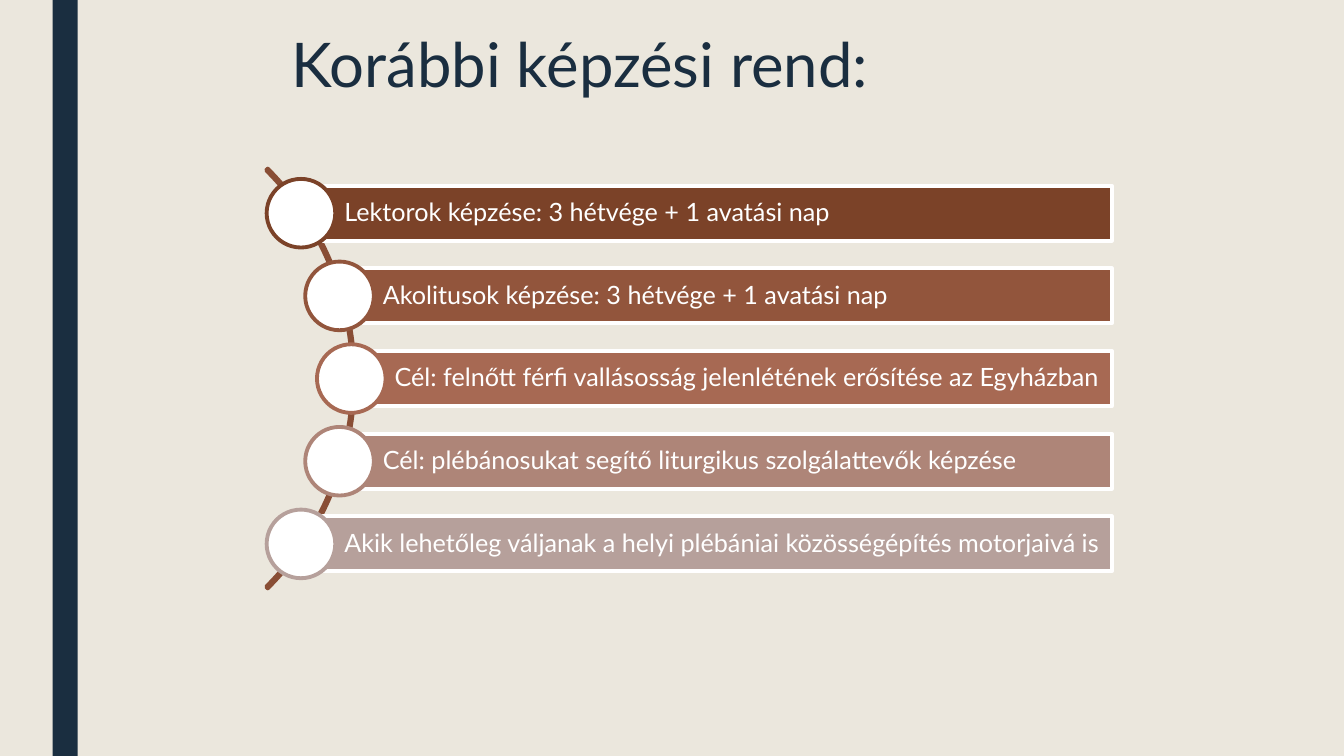
from dataclasses import dataclass
from math import sqrt

from pptx import Presentation
from pptx.dml.color import RGBColor as RGB
from pptx.enum.shapes import MSO_SHAPE as SHAPE
from pptx.enum.text import MSO_ANCHOR as ANCHOR, MSO_AUTO_SIZE as AUTOSIZE, PP_ALIGN as ALIGN
from pptx.util import Pt


@dataclass(frozen=True)
class Theme:
    font: str = "Lato"
    background: str = "EBE7DD"
    navy: str = "1A2E40"
    white: str = "FFFFFF"
    arc: str = "894E35"
    steps: tuple = ("7B4228", "92553C", "A76953", "AE8578", "B6A09B")
    title_size: float = 44
    step_size: float = 18
    line_width: float = 2.75


def write(tf, text, *, font, size, color, anchor=ANCHOR.MIDDLE, spacing=0.9,
          insets=(7.2, 3.6, 7.2, 3.6)):
    tf.word_wrap = True
    tf.auto_size = AUTOSIZE.NONE
    tf.vertical_anchor = anchor
    tf.margin_left, tf.margin_top, tf.margin_right, tf.margin_bottom = map(Pt, insets)
    p = tf.paragraphs[0]
    p.alignment = ALIGN.LEFT
    p.line_spacing = spacing
    r = p.add_run()
    r.text = text
    r.font.name = font
    r.font.size = Pt(size)
    r.font.color.rgb = RGB.from_string(color)


class Deck:
    def __init__(self, theme, width, height):
        self.theme = theme
        self.prs = Presentation()
        self.prs.slide_width, self.prs.slide_height = Pt(width), Pt(height)
        self.s = None

    def add_slide(self):
        self.s = self.prs.slides.add_slide(self.prs.slide_layouts[5])
        fill = self.s.background.fill
        fill.solid()
        fill.fore_color.rgb = RGB.from_string(self.theme.background)

    def title(self, text, x, y, w, h):
        sp = self.s.shapes.title
        sp.left, sp.top, sp.width, sp.height = map(Pt, (x, y, w, h))
        write(sp.text_frame, text, font=self.theme.font, size=self.theme.title_size,
              color=self.theme.navy, anchor=ANCHOR.TOP, spacing=0.89)

    def shape(self, kind, x, y, w, h, fill=None, line=None):
        sp = self.s.shapes.add_shape(kind, *map(Pt, (x, y, w, h)))
        sp.shadow.inherit = False
        if fill:
            sp.fill.solid()
            sp.fill.fore_color.rgb = RGB.from_string(fill)
        else:
            sp.fill.background()
        if line:
            sp.line.color.rgb = RGB.from_string(line)
            sp.line.width = Pt(self.theme.line_width)
        else:
            sp.line.fill.background()
        return sp

    def arc(self, cx, cy, radius):
        sp = self.shape(SHAPE.BLOCK_ARC, cx - radius, cy - radius, 2 * radius, 2 * radius,
                        line=self.theme.arc)
        for i, value in enumerate((189, 27, 0.004)):
            sp.adjustments[i] = value

    def step(self, text, color, x, cy, right, height, diameter):
        t = self.theme
        bar = self.shape(SHAPE.RECTANGLE, x, cy - height / 2, right - x, height, color, t.white)
        write(bar.text_frame, text, font=t.font, size=t.step_size, color=t.white,
              insets=(31, 3.6, 3.6, 3.6))
        self.shape(SHAPE.OVAL, x - diameter / 2, cy - diameter / 2, diameter, diameter,
                   t.white, color)


STEPS = (
    "Lektorok képzése: 3 hétvége + 1 avatási nap",
    "Akolitusok képzése: 3 hétvége + 1 avatási nap",
    "Cél: felnőtt férfi vallásosság jelenlétének erősítése az Egyházban",
    "Cél: plébánosukat segítő liturgikus szolgálattevők képzése",
    "Akik lehetőleg váljanak a helyi plébániai közösségépítés motorjaivá is",
)


def main():
    theme = Theme()
    deck = Deck(theme, 960, 540)
    deck.add_slide()
    deck.shape(SHAPE.RECTANGLE, 37.5, 0, 18, 540, theme.navy)
    deck.title("Korábbi képzési rend:", 201, 21, 626.4, 85)

    cx, cy, radius, pitch, inward = 41.4, 270.4, 212, 59.05, 2.5
    deck.arc(cx, cy, radius)
    for i, (text, color) in enumerate(zip(STEPS, theme.steps)):
        dy = (i - len(STEPS) // 2) * pitch
        x = cx + sqrt(radius ** 2 - dy ** 2) - inward
        deck.step(text, color, x, cy + dy, right=794.2, height=39.4, diameter=49)

    deck.prs.save("out.pptx")


if __name__ == "__main__":
    main()
